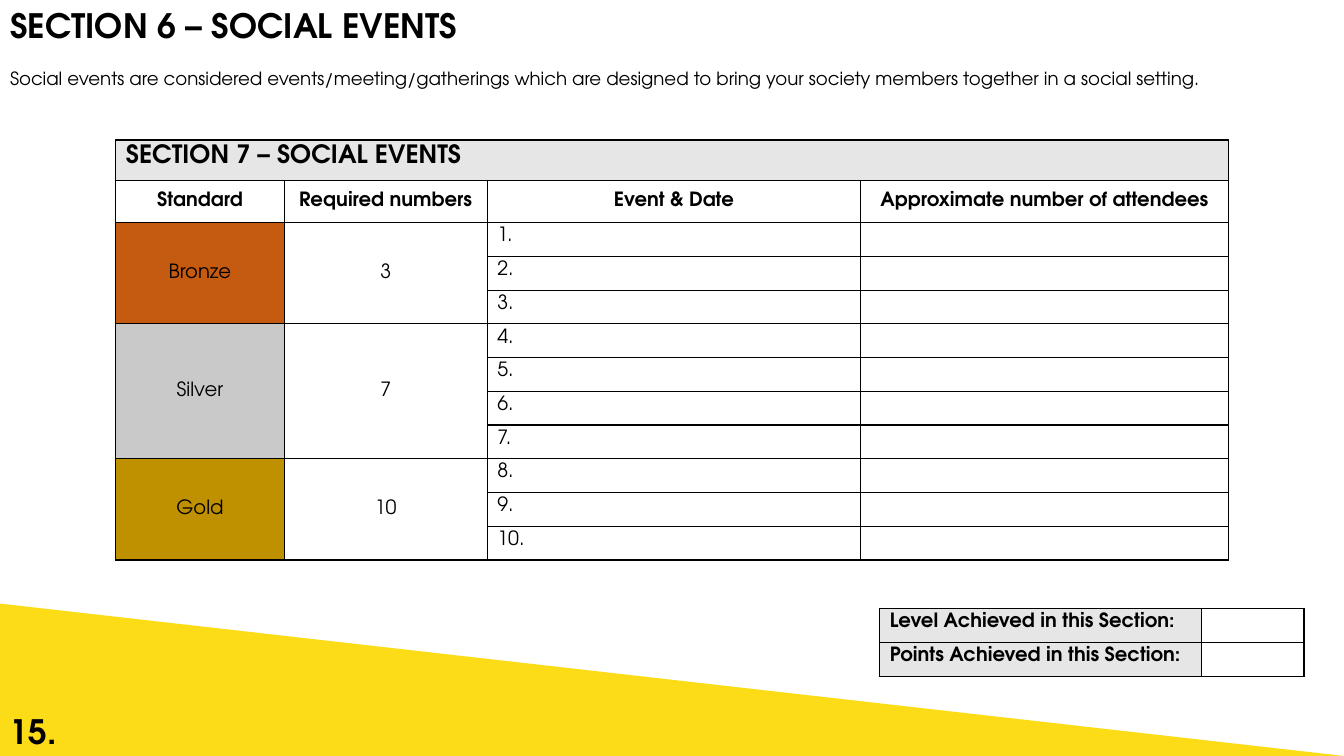
"""Builds the social events slide of a society standards form."""
import pptx
import pptx.util
import pptx.dml.color
import pptx.enum.shapes
import pptx.enum.text
import pptx.oxml
import pptx.oxml.ns

Cm = pptx.util.Cm
Pt = pptx.util.Pt
ALIGN = pptx.enum.text.PP_ALIGN
ANCHOR = pptx.enum.text.MSO_ANCHOR
FONT = "TeX Gyre Adventor"
HUES = {
    "ink": "000000",
    "paper": "FFFFFF",
    "head": "E7E6E6",
    "bronze": "C55A11",
    "silver": "C9C9C9",
    "gold": "BF9000",
    "wedge": "FCDC16",
}
HEADS = ["Standard", "Required numbers", "Event & Date", "Approximate number of attendees"]
LEVELS = [("Bronze", 3, 3), ("Silver", 7, 4), ("Gold", 10, 3)]
RESULTS = ["Level Achieved in this Section:", "Points Achieved in this Section:"]


def color(name):
    return pptx.dml.color.RGBColor.from_string(HUES[name])


def paint(fill, name):
    fill.solid()
    fill.fore_color.rgb = color(name)


def write(para, text, size=14, bold=False, align=ALIGN.LEFT, before=0):
    para.alignment = align
    para.space_before = Pt(before)
    run = para.add_run()
    run.text = text
    run.font.name = FONT
    run.font.size = Pt(size)
    run.font.bold = bold
    run.font.color.rgb = color("ink")


def border(cell):
    props = cell._tc.get_or_add_tcPr()
    for spot, side in enumerate("LRTB"):
        line = pptx.oxml.parse_xml(
            f'<a:ln{side} {pptx.oxml.ns.nsdecls("a")} w="{Pt(1)}"><a:solidFill>'
            f'<a:srgbClr val="{HUES["ink"]}"/></a:solidFill></a:ln{side}>'
        )
        props.insert(spot, line)


def grid(slide, left, top, widths, heights):
    frame = slide.shapes.add_table(
        len(heights), len(widths), Cm(left), Cm(top), Cm(sum(widths)), Cm(sum(heights))
    )
    table = frame.table
    table.first_row = table.horz_banding = False
    for col, width in zip(table.columns, widths):
        col.width = Cm(width)
    for row, height in zip(table.rows, heights):
        row.height = Cm(height)
    for cell in table.iter_cells():
        cell.margin_top = cell.margin_bottom = 0
        paint(cell.fill, "paper")
        border(cell)
    return table


def label(cell, text, fill="paper", mid=False, **look):
    paint(cell.fill, fill)
    cell.margin_top = cell.margin_bottom = Cm(0.12)
    if mid:
        cell.vertical_anchor = ANCHOR.MIDDLE
        look["align"] = ALIGN.CENTER
    write(cell.text_frame.paragraphs[0], text, **look)


def place(shape, left, top, width, height):
    shape.left, shape.top = Cm(left), Cm(top)
    shape.width, shape.height = Cm(width), Cm(height)


def title(slide):
    shape = slide.shapes.title
    place(shape, 0, 0, 33.87, 2.39)
    frame = shape.text_frame
    frame.auto_size = pptx.enum.text.MSO_AUTO_SIZE.NONE
    frame.vertical_anchor = ANCHOR.TOP
    write(frame.paragraphs[0], "SECTION 6 – SOCIAL EVENTS", size=24, bold=True)
    write(
        frame.add_paragraph(),
        "Social events are considered events/meeting/gatherings which are designed "
        "to bring your society members together in a social setting.",
        size=13,
        before=15.7,
    )


def events(slide):
    table = grid(slide, 2.92, 3.53, [4.24, 5.12, 9.41, 9.27], [1.02, 1.06] + [0.85] * 10)
    table.cell(0, 0).merge(table.cell(0, 3))
    label(table.cell(0, 0), "SECTION 7 – SOCIAL EVENTS", "head", size=18, bold=True)
    for col, text in enumerate(HEADS):
        label(table.cell(1, col), text, mid=True, bold=True)
    top = 2
    for name, count, span in LEVELS:
        for col, text in enumerate([name, str(count)]):
            cell = table.cell(top, col)
            cell.merge(table.cell(top + span - 1, col))
            label(cell, text, "paper" if col else name.lower(), mid=True)
        top += span
    for num in range(1, 11):
        label(table.cell(num + 1, 2), f"{num}.")


def wedge(slide):
    shape = slide.shapes.add_shape(
        pptx.enum.shapes.MSO_SHAPE.RIGHT_TRIANGLE, 0, Cm(15.21), Cm(33.87), Cm(3.84)
    )
    shape.shadow.inherit = False
    paint(shape.fill, "wedge")
    shape.line.fill.background()


def number(slide):
    box = slide.shapes.add_textbox(0, Cm(17.78), Cm(1.73), Cm(1.27))
    box.text_frame.word_wrap = False
    write(box.text_frame.paragraphs[0], "15.", size=24, bold=True)


def results(slide):
    table = grid(slide, 22.17, 15.34, [8.1, 2.59], [0.85] * 2)
    for row, text in enumerate(RESULTS):
        label(table.cell(row, 0), text, "head", bold=True)


def main():
    deck = pptx.Presentation()
    deck.slide_width, deck.slide_height = Cm(33.87), Cm(19.05)
    slide = deck.slides.add_slide(deck.slide_layouts[5])
    title(slide)
    events(slide)
    wedge(slide)
    number(slide)
    results(slide)
    deck.save("out.pptx")


if __name__ == "__main__":
    main()
